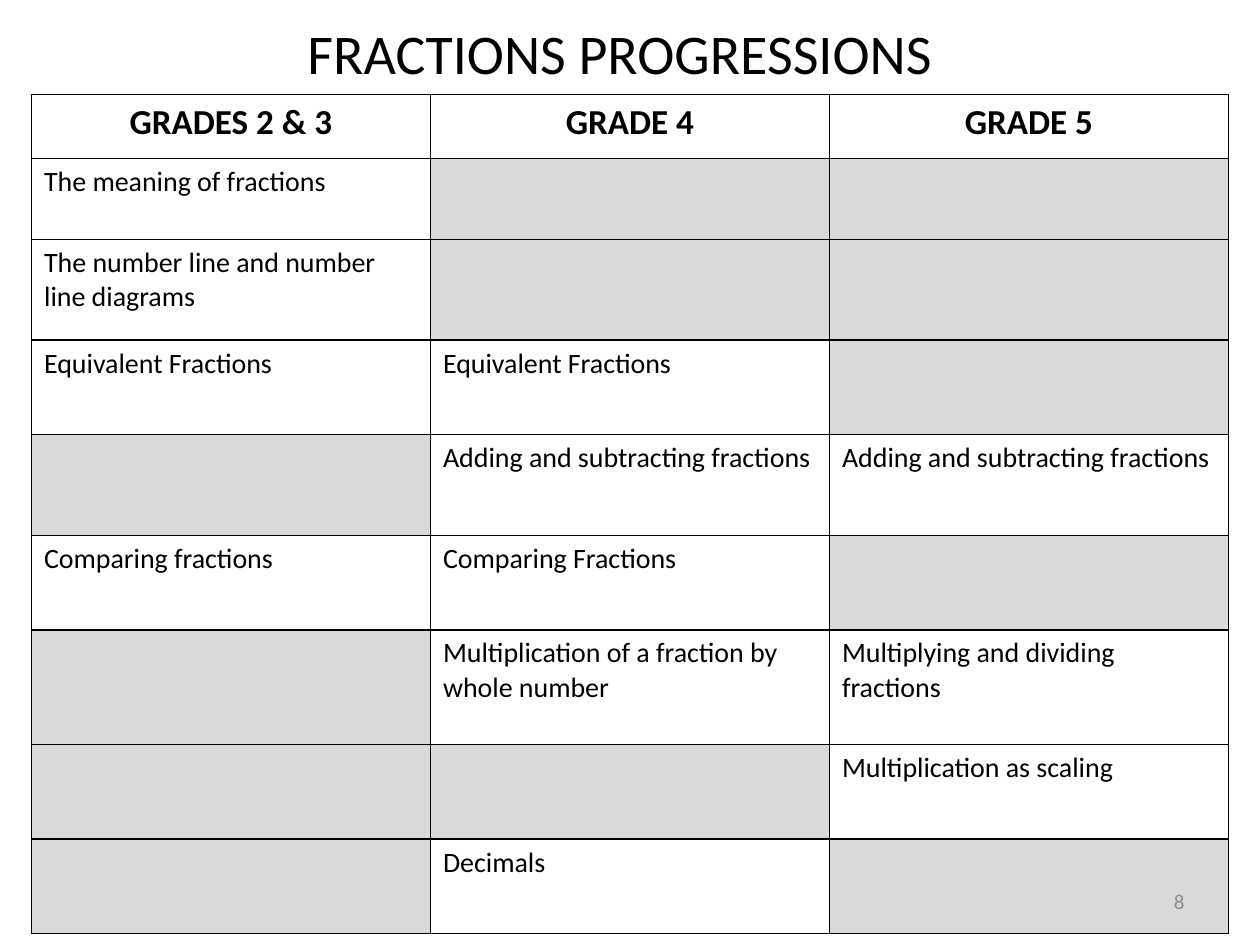
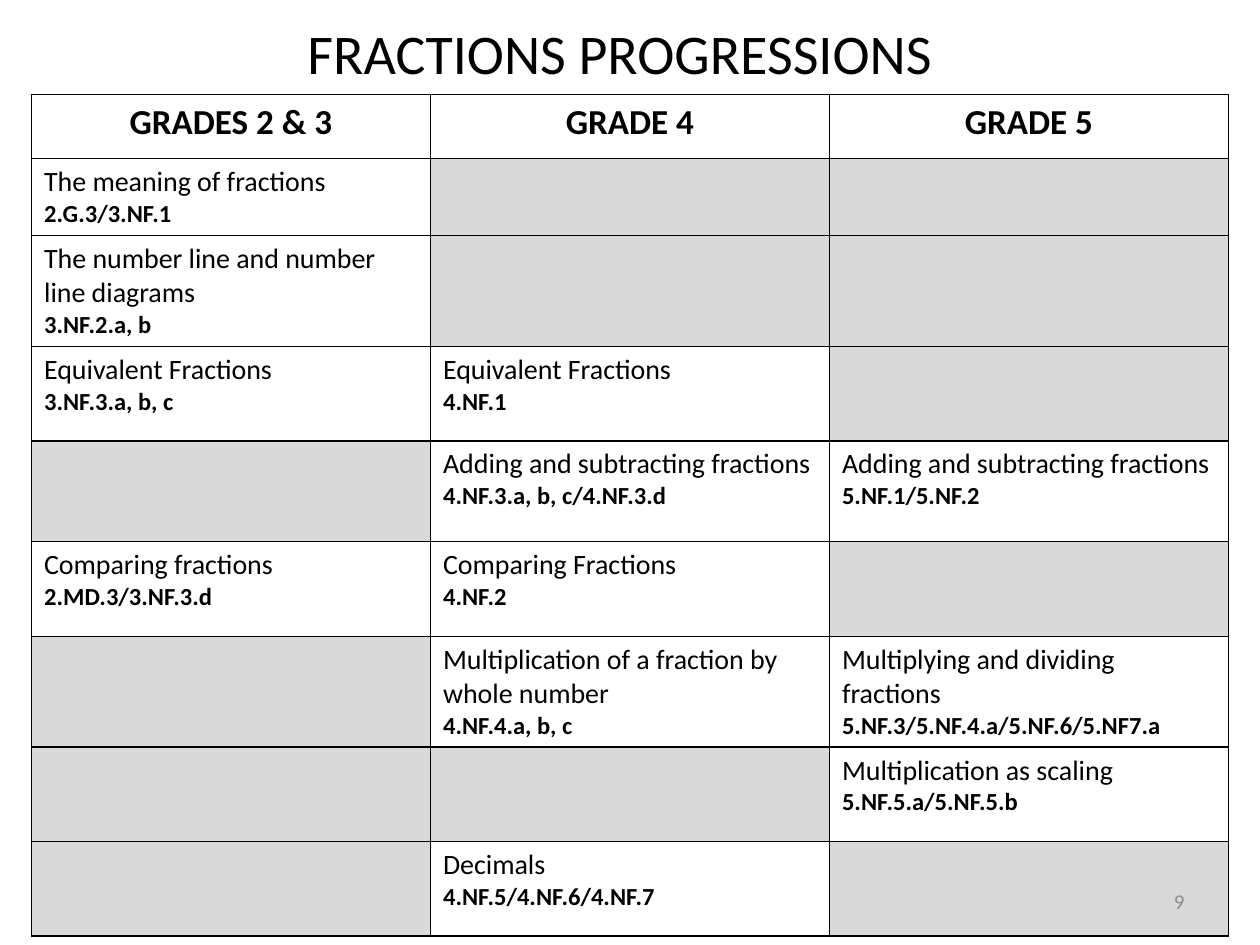
from lxml.etree import SubElement
from pptx import Presentation
from pptx.dml.color import RGBColor
from pptx.enum.text import MSO_ANCHOR as Anchor, PP_ALIGN as Align
from pptx.oxml.ns import qn
from pptx.util import Inches, Pt

FONT = "Calibri"
BLACK = RGBColor(0x00, 0x00, 0x00)
WHITE = RGBColor(0xFF, 0xFF, 0xFF)
NOT_TAUGHT_GREY = RGBColor(0xD9, 0xD9, 0xD9)
PAGE_NUMBER_GREY = RGBColor(0x8C, 0x8C, 0x8C)

TITLE = "FRACTIONS PROGRESSIONS"
GRADES = ("GRADES 2 & 3", "GRADE 4", "GRADE 5")
TABLE_WIDTH = 9.5

# Each row holds one (topic, standards) pair per grade, or None if not taught.
PROGRESSIONS = (
    (("The meaning of fractions", "2.G.3/3.NF.1"), None, None),
    (("The number line and number line diagrams", "3.NF.2.a, b"), None, None),
    (("Equivalent Fractions", "3.NF.3.a, b, c"),
     ("Equivalent Fractions", "4.NF.1"), None),
    (None, ("Adding and subtracting fractions", "4.NF.3.a, b, c/4.NF.3.d"),
     ("Adding and subtracting fractions", "5.NF.1/5.NF.2")),
    (("Comparing fractions", "2.MD.3/3.NF.3.d"),
     ("Comparing Fractions", "4.NF.2"), None),
    (None, ("Multiplication of a fraction by whole number", "4.NF.4.a, b, c"),
     ("Multiplying and dividing fractions", "5.NF.3/5.NF.4.a/5.NF.6/5.NF7.a")),
    (None, None, ("Multiplication as scaling", "5.NF.5.a/5.NF.5.b")),
    (None, ("Decimals", "4.NF.5/4.NF.6/4.NF.7"), None),
)
TOPIC_HEIGHTS = (0.51, 0.64, 0.8, 0.75, 0.8, 0.75, 0.91, 0.75, 0.75)
STANDARDS_HEIGHTS = (0.51, 0.61, 0.88, 0.75, 0.8, 0.75, 0.88, 0.75, 0.75)


def write(paragraph, text, size=16, bold=False, color=BLACK, align=Align.LEFT):
    paragraph.alignment = align
    run = paragraph.add_run()
    run.text = text
    font = run.font
    font.name, font.size, font.bold = FONT, Pt(size), bold
    font.color.rgb = color


def add_label(slide, text, left, top, width, height, **text_format):
    box = slide.shapes.add_textbox(*map(Inches, (left, top, width, height)))
    frame = box.text_frame
    frame.word_wrap = True
    frame.vertical_anchor = Anchor.MIDDLE
    write(frame.paragraphs[0], text, **text_format)


def style_cell(cell, fill):
    """Outline the cell in black and fill it; borders must precede the fill."""
    properties = cell._tc.get_or_add_tcPr()
    for side in ("a:lnL", "a:lnR", "a:lnT", "a:lnB"):
        border = SubElement(properties, qn(side), w=str(Pt(1)))
        solid = SubElement(border, qn("a:solidFill"))
        SubElement(solid, qn("a:srgbClr"), val=str(BLACK))
    cell.fill.solid()
    cell.fill.fore_color.rgb = fill


def fill_topic(cell, entry, show_standards):
    style_cell(cell, WHITE if entry else NOT_TAUGHT_GREY)
    if entry:
        topic, standards = entry
        frame = cell.text_frame
        write(frame.paragraphs[0], topic)
        if show_standards:
            write(frame.add_paragraph(), standards, size=14, bold=True)


def add_progression_table(slide, row_heights, show_standards):
    table = slide.shapes.add_table(
        len(row_heights), len(GRADES), Inches(0.25), Inches(0.75),
        Inches(TABLE_WIDTH), Inches(sum(row_heights))).table
    table.first_row = table.horz_banding = False
    for column in table.columns:
        column.width = Inches(TABLE_WIDTH / len(GRADES))
    for row, height in zip(table.rows, row_heights):
        row.height = Inches(height)

    for column, grade in enumerate(GRADES):
        heading = table.cell(0, column)
        style_cell(heading, WHITE)
        write(heading.text_frame.paragraphs[0], grade,
              size=20, bold=True, align=Align.CENTER)
    for row, entries in enumerate(PROGRESSIONS, start=1):
        for column, entry in enumerate(entries):
            fill_topic(table.cell(row, column), entry, show_standards)


def add_progression_slide(deck, page, row_heights, show_standards):
    slide = deck.slides.add_slide(deck.slide_layouts[6])
    add_label(slide, TITLE, 0.42, 0, 9, 0.83, size=32, align=Align.CENTER)
    add_progression_table(slide, row_heights, show_standards)
    add_label(slide, str(page), 7.17, 6.95, 2.33, 0.4,
              size=12, color=PAGE_NUMBER_GREY, align=Align.RIGHT)


def main():
    deck = Presentation()
    deck.slide_width, deck.slide_height = Inches(10), Inches(7.5)
    add_progression_slide(deck, 8, TOPIC_HEIGHTS, show_standards=False)
    add_progression_slide(deck, 9, STANDARDS_HEIGHTS, show_standards=True)
    deck.save("out.pptx")


if __name__ == "__main__":
    main()
